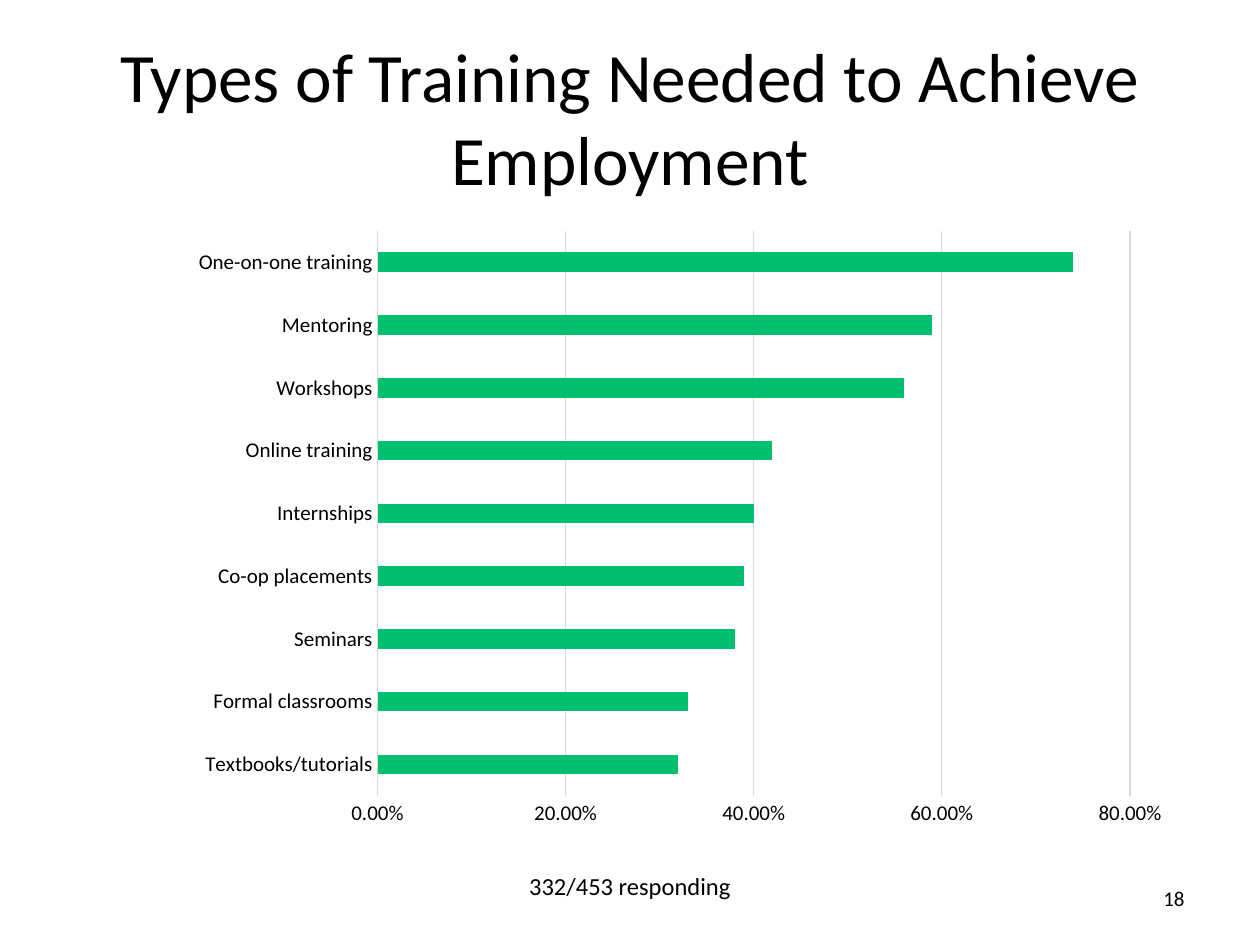
from lxml.etree import SubElement
from pptx import Presentation
from pptx.chart.data import CategoryChartData
from pptx.dml.color import RGBColor
from pptx.enum.chart import XL_CHART_TYPE, XL_TICK_MARK
from pptx.enum.text import MSO_ANCHOR, MSO_AUTO_SIZE, PP_ALIGN
from pptx.oxml.ns import qn
from pptx.util import Pt

COLORS = {"text": "000000", "bar": "00BF6F", "grid": "D9D9D9"}
FONT = "Calibri"

TRAINING_SHARES = {
    "Textbooks/tutorials": 0.32,
    "Formal classrooms": 0.33,
    "Seminars": 0.38,
    "Co-op placements": 0.39,
    "Internships": 0.4,
    "Online training": 0.42,
    "Workshops": 0.56,
    "Mentoring": 0.59,
    "One-on-one training": 0.74,
}


def color(name):
    return RGBColor.from_string(COLORS[name])


def format_font(font, size):
    font.name = FONT
    font.size = Pt(size)
    font.bold = False
    font.color.rgb = color("text")


def place(shape, box):
    shape.left, shape.top, shape.width, shape.height = (Pt(v) for v in box)


def write_text(shape, text, size, align=PP_ALIGN.CENTER,
               anchor=MSO_ANCHOR.MIDDLE, wrap=True, fit=MSO_AUTO_SIZE.NONE):
    frame = shape.text_frame
    frame.word_wrap = wrap
    frame.auto_size = fit
    frame.vertical_anchor = anchor
    para = frame.paragraphs[0]
    para.alignment = align
    span = para.add_run()
    span.text = text
    format_font(span.font, size)


def add_title(page, box, text):
    place(page.shapes.title, box)
    write_text(page.shapes.title, text, size=39.6)


def add_label(page, box, text, **text_format):
    label = page.shapes.add_textbox(*(Pt(v) for v in box))
    write_text(label, text, **text_format)


def set_plot_area(chart, chart_box, plot_box):
    """Fix the inner plot area; both boxes are in points on the slide."""
    left, top, width, height = chart_box
    plot_left, plot_top, plot_width, plot_height = plot_box
    plot_area = chart._chartSpace.chart.plotArea
    layout = plot_area.find(qn("c:layout"))
    if layout is None:
        layout = plot_area.makeelement(qn("c:layout"))
        plot_area.insert(0, layout)
    manual = SubElement(layout, qn("c:manualLayout"))
    settings = {"layoutTarget": "inner", "xMode": "edge", "yMode": "edge",
                "x": (plot_left - left) / width,
                "y": (plot_top - top) / height,
                "w": plot_width / width, "h": plot_height / height}
    for tag, value in settings.items():
        SubElement(manual, qn(f"c:{tag}")).set("val", str(value))


def format_line(line):
    line.color.rgb = color("grid")
    line.width = Pt(0.75)


def add_training_chart(page, box, plot_box):
    data = CategoryChartData(number_format="0.00%")
    data.categories = list(TRAINING_SHARES)
    data.add_series("Series 1", list(TRAINING_SHARES.values()))
    chart = page.shapes.add_chart(
        XL_CHART_TYPE.BAR_CLUSTERED, *(Pt(v) for v in box), data).chart
    chart.has_legend = False
    chart.has_title = False
    format_font(chart.font, 10)
    set_plot_area(chart, box, plot_box)

    plot = chart.plots[0]
    plot.gap_width = 219
    plot.vary_by_categories = False
    fill = plot.series[0].format.fill
    fill.solid()
    fill.fore_color.rgb = color("bar")

    for axis in (chart.category_axis, chart.value_axis):
        axis.major_tick_mark = axis.minor_tick_mark = XL_TICK_MARK.NONE
        format_font(axis.tick_labels.font, 12)
    chart.category_axis.has_major_gridlines = False
    format_line(chart.category_axis.format.line)

    values = chart.value_axis
    values.minimum_scale, values.maximum_scale = 0, 0.8
    values.major_unit = 0.2
    values.tick_labels.number_format = "0.00%"
    values.tick_labels.number_format_is_linked = False
    values.format.line.fill.background()
    values.has_major_gridlines = True
    format_line(values.major_gridlines.format.line)


def main():
    deck = Presentation()
    deck.slide_width, deck.slide_height = Pt(720), Pt(540)
    page = deck.slides.add_slide(deck.slide_layouts[5])
    add_title(page, (36, 21.6, 648, 90),
              "Types of Training Needed to Achieve Employment")
    add_training_chart(page, (49, 119.5, 623, 368.5),
                       plot_box=(215.7, 132, 430, 322.8))
    add_label(page, (294.5, 494, 131, 24.5), "332/453 responding", size=14,
              anchor=MSO_ANCHOR.TOP, wrap=False,
              fit=MSO_AUTO_SIZE.SHAPE_TO_FIT_TEXT)
    add_label(page, (554.4, 499, 129.6, 28.8), "18", size=12,
              align=PP_ALIGN.RIGHT)
    deck.save("out.pptx")


if __name__ == "__main__":
    main()
